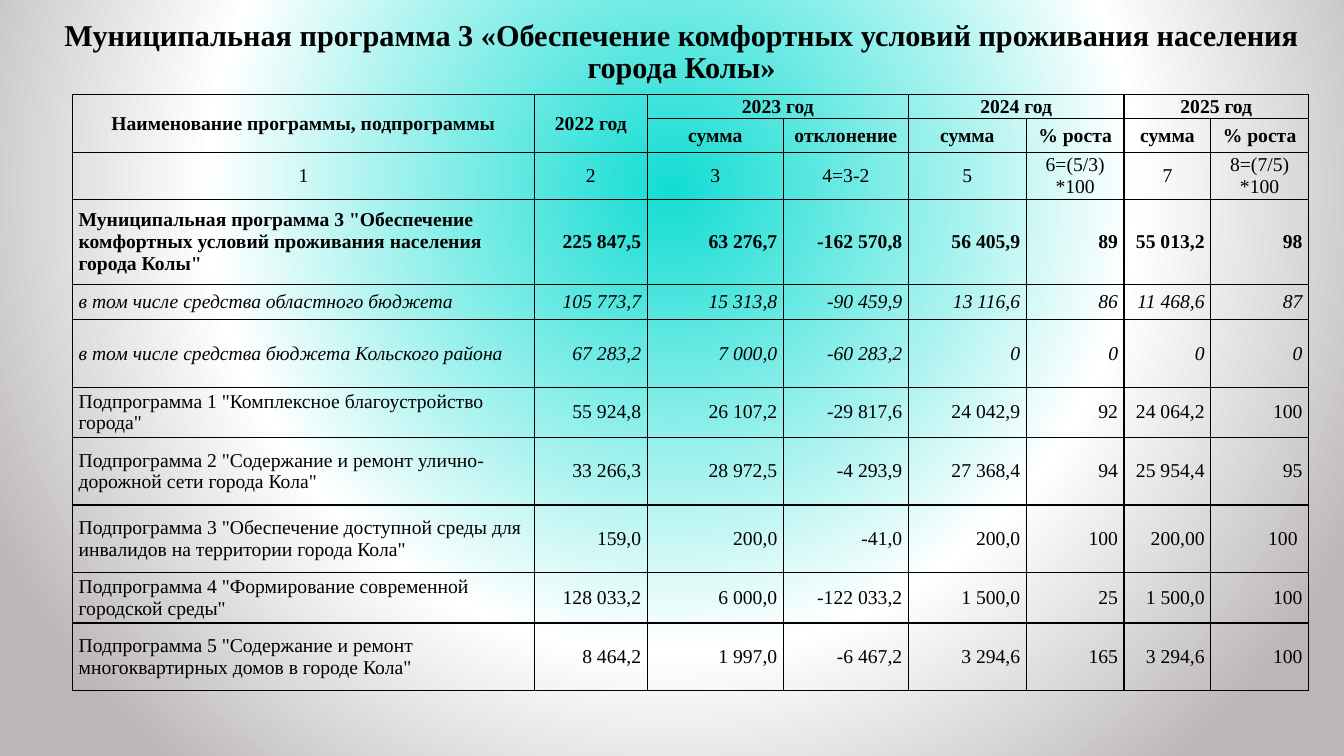
from lxml import etree
from pptx import Presentation
from pptx import util as u
from pptx.dml.color import RGBColor
from pptx.enum import text
from pptx.oxml import parse_xml
from pptx.oxml.ns import nsdecls, qn

TITLE = "Муниципальная программа 3 «Обеспечение комфортных условий проживания населения города Колы»"
FONT, INK = "Times New Roman", "000000"
STOPS = [(0, "13DDD3", 56), (60, "FFFFFF", 100), (100, "BBB7B7", 100)]
FOCUS = {"l": 20, "t": 10, "r": 20, "b": 60}
COLS = [4.58, 1.12, 1.35, 1.24, 1.17, 0.97, 0.86, 0.97]
TALL = [0.22, 0.34, 0.38, 0.84, 0.35, 0.67, 0.5, 0.67, 0.67, 0.5, 0.67]
SPANS = [(0, 0, 1, 0), (0, 1, 1, 1), (0, 2, 0, 3), (0, 4, 0, 5), (0, 6, 0, 7)]
HEADS, BOLD, ITALIC = 3, (0, 1, 3), (4, 5)
ROWS = [
    ("Наименование программы, подпрограммы", "2022 год", "2023 год", "", "2024 год", "", "2025 год", ""),
    ("", "", "сумма", "отклонение", "сумма", "% роста", "сумма", "% роста"),
    ("1", "2", "3", "4=3-2", "5", "6=(5/3)\n*100", "7", "8=(7/5)\n*100"),
    ('Муниципальная программа 3 "Обеспечение комфортных условий проживания населения города Колы"',
     "225 847,5", "63 276,7", "-162 570,8", "56 405,9", "89", "55 013,2", "98"),
    ("в том числе средства областного бюджета",
     "105 773,7", "15 313,8", "-90 459,9", "13 116,6", "86", "11 468,6", "87"),
    ("в том числе средства бюджета Кольского района",
     "67 283,2", "7 000,0", "-60 283,2", "0", "0", "0", "0"),
    ('Подпрограмма 1 "Комплексное благоустройство города"',
     "55 924,8", "26 107,2", "-29 817,6", "24 042,9", "92", "24 064,2", "100"),
    ('Подпрограмма 2 "Содержание и ремонт улично-дорожной сети города Кола"',
     "33 266,3", "28 972,5", "-4 293,9", "27 368,4", "94", "25 954,4", "95"),
    ('Подпрограмма 3 "Обеспечение доступной среды для инвалидов на территории города Кола"',
     "159,0", "200,0", "-41,0", "200,0", "100", "200,00", "100 "),
    ('Подпрограмма 4 "Формирование современной городской среды"',
     "128 033,2", "6 000,0", "-122 033,2", "1 500,0", "25", "1 500,0", "100"),
    ('Подпрограмма 5 "Содержание и ремонт многоквартирных домов в городе Кола"',
     "8 464,2", "1 997,0", "-6 467,2", "3 294,6", "165", "3 294,6", "100"),
]


def style(para, size, align, bold=False, italic=False):
    """Set the font and alignment of a paragraph."""
    font = para.font
    font.name, font.size, font.bold, font.italic = FONT, u.Pt(size), bold, italic
    font.color.rgb = RGBColor.from_string(INK)
    para.alignment = align


def paint(slide):
    """Fill the background with a radial gradient."""
    slide.background.fill.gradient()
    grad = next(slide.element.iter(qn("a:gradFill")))
    stops = "".join(
        f'<a:gs pos="{pos * 1000}"><a:srgbClr val="{hue}"><a:alpha val="{alpha * 1000}"/></a:srgbClr></a:gs>'
        for pos, hue, alpha in STOPS)
    sides = " ".join(f'{side}="{share * 1000}"' for side, share in FOCUS.items())
    grad.getparent().replace(grad, parse_xml(
        f'<a:gradFill {nsdecls("a")} rotWithShape="1"><a:gsLst>{stops}</a:gsLst>'
        f'<a:path path="circle"><a:fillToRect {sides}/></a:path></a:gradFill>'))


def edge(cell):
    """Draw thin lines on all four sides of a cell."""
    props = cell._tc.get_or_add_tcPr()
    for spot, side in enumerate(("lnL", "lnR", "lnT", "lnB")):
        line = etree.Element(qn("a:" + side), w=str(u.Pt(1)))
        solid = etree.SubElement(line, qn("a:solidFill"))
        etree.SubElement(solid, qn("a:srgbClr"), val=INK)
        props.insert(spot, line)


def head(slide):
    """Add the slide title."""
    box = slide.shapes.add_textbox(u.Inches(0.45), u.Inches(0.21), u.Inches(12.62), u.Inches(0.63))
    frame = box.text_frame
    frame.word_wrap, frame.vertical_anchor = True, text.MSO_ANCHOR.MIDDLE
    frame.text = TITLE
    para = frame.paragraphs[0]
    para.line_spacing = 0.9
    style(para, 21.6, text.PP_ALIGN.CENTER, True)


def fill(cell, row, col):
    """Write and format one table cell."""
    cell.fill.background()
    edge(cell)
    cell.margin_left = cell.margin_right = u.Inches(0.06)
    cell.margin_top = cell.margin_bottom = 0
    cell.vertical_anchor = text.MSO_ANCHOR.MIDDLE
    cell.text = ROWS[row][col]
    align = text.PP_ALIGN.RIGHT if col else text.PP_ALIGN.LEFT
    if row < HEADS:
        align = text.PP_ALIGN.CENTER
    for para in cell.text_frame.paragraphs:
        style(para, 14, align, row in BOLD, row in ITALIC)


def grid(slide):
    """Add the budget table."""
    table = slide.shapes.add_table(
        len(TALL), len(COLS), u.Inches(0.72), u.Inches(0.94),
        u.Inches(sum(COLS)), u.Inches(sum(TALL))).table
    table.first_row = table.horz_banding = False
    for col, wide in zip(table.columns, COLS):
        col.width = u.Inches(wide)
    for row, tall in zip(table.rows, TALL):
        row.height = u.Inches(tall)
    for row in range(len(TALL)):
        for col in range(len(COLS)):
            fill(table.cell(row, col), row, col)
    for top, left, low, right in SPANS:
        table.cell(top, left).merge(table.cell(low, right))


def main():
    """Build and save the slide."""
    deck = Presentation()
    deck.slide_width, deck.slide_height = u.Inches(13.33), u.Inches(7.5)
    slide = deck.slides.add_slide(deck.slide_layouts[6])
    paint(slide)
    head(slide)
    grid(slide)
    deck.save("out.pptx")


if __name__ == "__main__":
    main()
